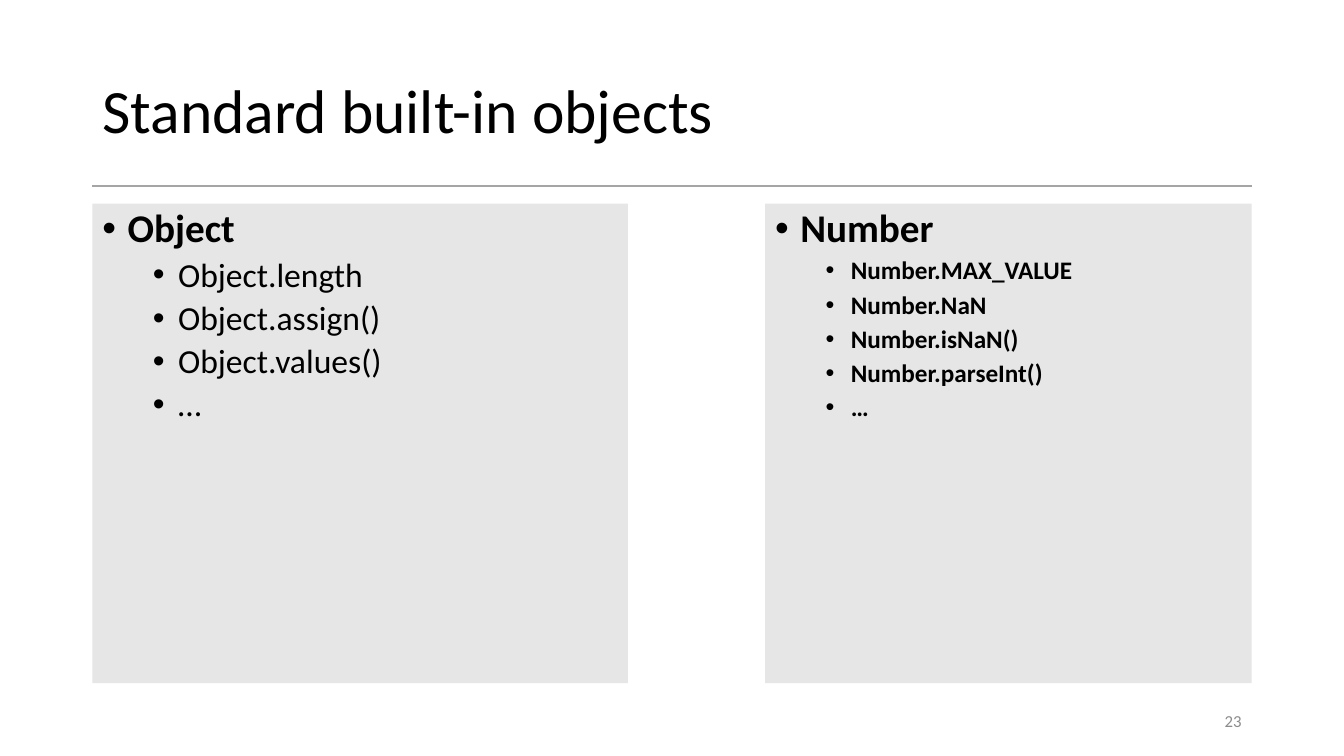
"""Build the slide on standard built-in objects with two bullet panels."""
from lxml import etree
from pptx import Presentation
from pptx.dml.color import RGBColor
from pptx.enum import shapes, text
from pptx.oxml import ns
from pptx.util import Pt

LEFT, WIDTH = 66, 828
PANEL_TOP, PANEL_HEIGHT = 145.5, 342.5


def rgb(value):
    return RGBColor.from_string(value)


def add_run(p, words, size, color="000000", bold=False):
    r = p.add_run()
    r.text = words
    r.font.name = "Calibri"
    r.font.size = Pt(size)
    r.font.bold = bold
    r.font.color.rgb = rgb(color)


prs = Presentation()
prs.slide_width, prs.slide_height = Pt(960), Pt(540)
s = prs.slides.add_slide(prs.slide_layouts[3])
title, *bodies = s.placeholders

rule = s.shapes.add_connector(
    shapes.MSO_CONNECTOR.STRAIGHT, Pt(LEFT), Pt(133), Pt(LEFT + WIDTH), Pt(133))
rule.line.color.rgb = rgb("A5A5A5")
rule.line.width = Pt(1.5)
etree.SubElement(rule.line._get_or_add_ln().getparent(), ns.qn("a:effectLst"))

title.left, title.top, title.width, title.height = Pt(LEFT), Pt(28.75), Pt(WIDTH), Pt(104.4)
tf = title.text_frame
tf.auto_size = text.MSO_AUTO_SIZE.NONE
tf.vertical_anchor = text.MSO_ANCHOR.MIDDLE
p = tf.paragraphs[0]
p.alignment = text.PP_ALIGN.LEFT
p.line_spacing = 0.9
add_run(p, "Standard built-in objects", 44)

panels = [
    (LEFT, 382.5, "Object", 24, False,
     ["Object.length", "Object.assign()", "Object.values()", "…"]),
    (546.5, 347.5, "Number", 18, True,
     ["Number.MAX_VALUE", "Number.NaN", "Number.isNaN()", "Number.parseInt()", "…"]),
]
for sp, (left, width, heading, size, bold, members) in zip(bodies, panels):
    sp.left, sp.top, sp.width, sp.height = Pt(left), Pt(PANEL_TOP), Pt(width), Pt(PANEL_HEIGHT)
    sp.fill.solid()
    sp.fill.fore_color.rgb = rgb("E7E6E6")
    tf = sp.text_frame
    tf.auto_size = text.MSO_AUTO_SIZE.NONE
    tf.vertical_anchor = text.MSO_ANCHOR.TOP
    for i, words in enumerate([heading, *members]):
        p = tf.add_paragraph() if i else tf.paragraphs[0]
        p.level = 1 if i else 0
        p.line_spacing = 0.9
        p.space_before = Pt(5 if i else 10)
        pPr = p._p.get_or_add_pPr()
        pPr.set("marL", str(Pt(54 if i else 18)))
        pPr.set("indent", str(Pt(-18)))
        etree.SubElement(pPr, ns.qn("a:buFont"), typeface="Arial")
        etree.SubElement(pPr, ns.qn("a:buChar"), char="•")
        add_run(p, words, size if i else 28, bold=bold if i else True)

number = s.shapes.add_textbox(Pt(678), Pt(500.5), Pt(216), Pt(28.75))
tf = number.text_frame
tf.word_wrap = True
tf.vertical_anchor = text.MSO_ANCHOR.MIDDLE
p = tf.paragraphs[0]
p.alignment = text.PP_ALIGN.RIGHT
add_run(p, "23", 12, "8C8C8C")

prs.save("out.pptx")
